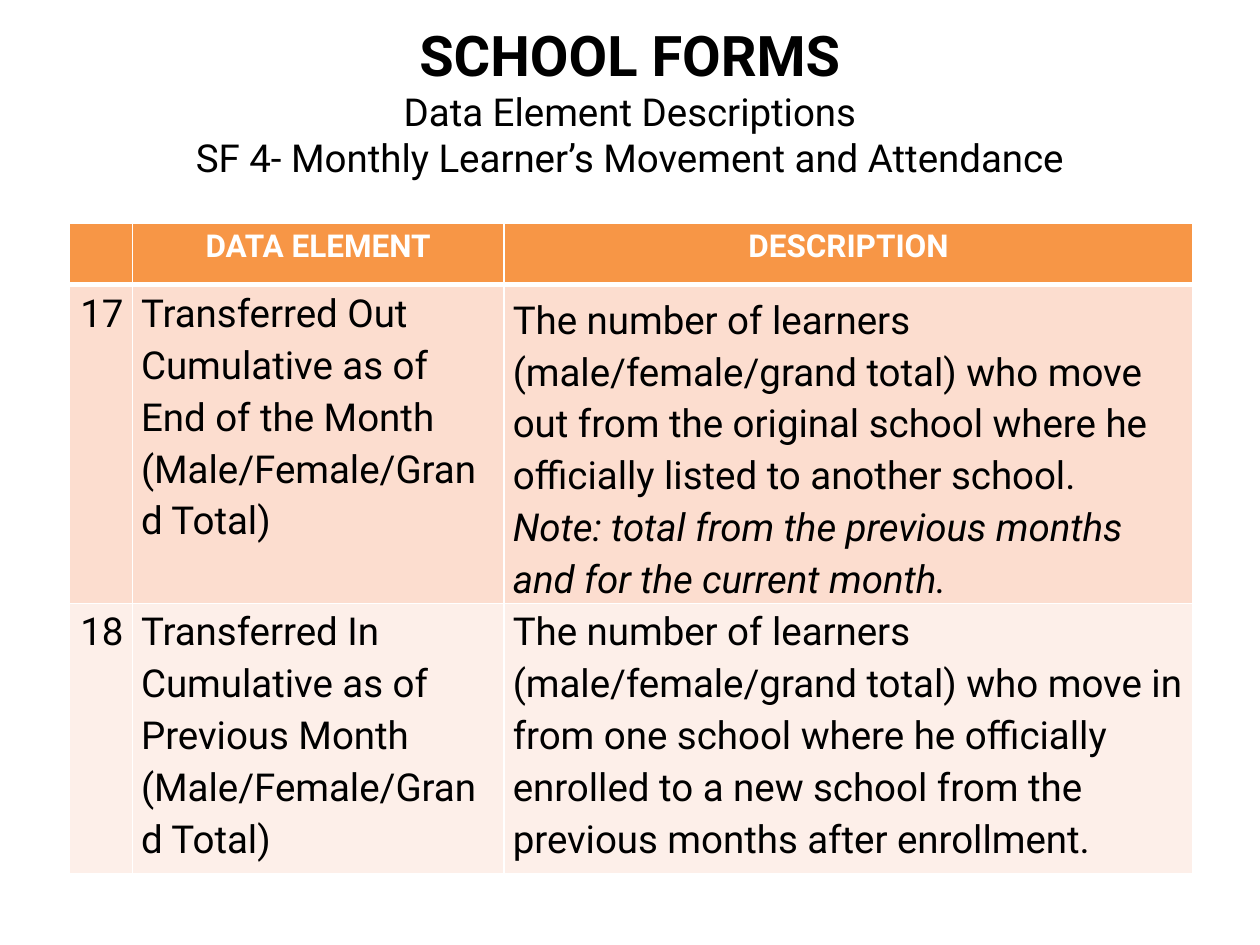
from lxml import etree
from pptx import Presentation
from pptx.dml.color import RGBColor
from pptx.enum.text import MSO_ANCHOR, PP_ALIGN
from pptx.oxml.ns import qn
from pptx.util import Inches, Pt

LEFT, RIGHT, CENTER = PP_ALIGN.LEFT, PP_ALIGN.RIGHT, PP_ALIGN.CENTER
TOP, MIDDLE, BOTTOM = MSO_ANCHOR.TOP, MSO_ANCHOR.MIDDLE, MSO_ANCHOR.BOTTOM

COLORS = {
    "text": "000000",
    "white": "FFFFFF",
    "header": "F79646",
    "odd_row": "FCDDCF",
    "even_row": "FDEFE9",
}
FONT = "Roboto"
TITLE_FORMAT = {"size": Pt(32), "bold": True}
BODY_FORMAT = {"size": Pt(22), "bold": False}
NOTE_FORMAT = {"size": Pt(22), "bold": False, "italic": True}
HEADER_FORMAT = {"size": Pt(18), "bold": True}

COLUMN_WIDTHS = [0.5, 2.95, 5.47]
ROW_HEIGHTS = [0.49, 2.47, 2.15]
BODY_ALIGNMENTS = [RIGHT, LEFT, LEFT]

HEADERS = ["", "DATA ELEMENT", "DESCRIPTION"]
ELEMENTS = [
    (
        "17",
        "Transferred Out\nCumulative as of End of the Month\n(Male/Female/Grand Total)",
        "The number of learners (male/female/grand total) who move out from "
        "the original school where he officially listed to another school.\n",
        "Note: total from the previous months and for the current month.",
    ),
    (
        "18",
        "Transferred In\nCumulative as of Previous Month\n(Male/Female/Grand Total)",
        "The number of learners (male/female/grand total) who move in from "
        "one school where he officially enrolled to a new school from the "
        "previous months after enrollment.",
        "",
    ),
]


def add_text(paragraph, text, values, color="text"):
    """Append formatted runs, turning each newline into a line break."""
    for index, line in enumerate(text.split("\n")):
        if index:
            paragraph.add_line_break()
        if not line:
            continue
        run = paragraph.add_run()
        run.text = line
        run.font.name = FONT
        run.font.color.rgb = RGBColor.from_string(COLORS[color])
        for name, value in values.items():
            setattr(run.font, name, value)


def add_title(slide, width, height):
    box = slide.shapes.add_textbox(
        int(width * 0.05), Inches(0.17), int(width * 0.9), int(height / 6)
    )
    frame = box.text_frame
    frame.word_wrap = True
    frame.vertical_anchor = MIDDLE
    paragraph = frame.paragraphs[0]
    paragraph.alignment = CENTER
    add_text(paragraph, "SCHOOL FORMS\n", TITLE_FORMAT)
    add_text(
        paragraph,
        "Data Element Descriptions\nSF 4- Monthly Learner’s Movement and Attendance",
        BODY_FORMAT,
    )


def set_borders(cell, widths):
    """Draw white borders; widths maps L, R, T and B to points."""
    properties = cell._tc.get_or_add_tcPr()
    for side, width in widths.items():
        line = etree.SubElement(properties, qn(f"a:ln{side}"), w=str(Pt(width)))
        fill = etree.SubElement(line, qn("a:solidFill"))
        etree.SubElement(fill, qn("a:srgbClr"), val=COLORS["white"])


def style_cell(cell, fill, alignment, anchor=TOP, top=1, bottom=1):
    """Style a cell and return its paragraph."""
    set_borders(cell, {"L": 1, "R": 1, "T": top, "B": bottom})
    cell.fill.solid()
    cell.fill.fore_color.rgb = RGBColor.from_string(COLORS[fill])
    cell.margin_left = cell.margin_right = Inches(0.07)
    cell.margin_top = cell.margin_bottom = 0
    cell.vertical_anchor = anchor
    paragraph = cell.text_frame.paragraphs[0]
    paragraph.alignment = alignment
    paragraph.line_spacing = 1.15
    return paragraph


def add_element_table(slide):
    table = slide.shapes.add_table(
        len(ROW_HEIGHTS), len(COLUMN_WIDTHS), Inches(0.55), Inches(1.77),
        Inches(sum(COLUMN_WIDTHS)), Inches(sum(ROW_HEIGHTS)),
    ).table
    for column, width in zip(table.columns, COLUMN_WIDTHS):
        column.width = Inches(width)
    for row, height in zip(table.rows, ROW_HEIGHTS):
        row.height = Inches(height)

    for column, header in enumerate(HEADERS):
        paragraph = style_cell(table.cell(0, column), "header", CENTER, bottom=3)
        add_text(paragraph, header, HEADER_FORMAT, "white")

    for row, (*texts, note) in enumerate(ELEMENTS, start=1):
        fill = "odd_row" if row % 2 else "even_row"
        for column, text in enumerate(texts):
            anchor = BOTTOM if note and column == 2 else TOP
            paragraph = style_cell(
                table.cell(row, column), fill, BODY_ALIGNMENTS[column], anchor,
                top=3 if row == 1 else 1,
            )
            add_text(paragraph, text, BODY_FORMAT)
        add_text(paragraph, note, NOTE_FORMAT)


def main():
    presentation = Presentation()
    presentation.slide_width = Inches(10)
    presentation.slide_height = Inches(7.5)
    slide = presentation.slides.add_slide(presentation.slide_layouts[6])
    add_title(slide, presentation.slide_width, presentation.slide_height)
    add_element_table(slide)
    presentation.save("out.pptx")


if __name__ == "__main__":
    main()
